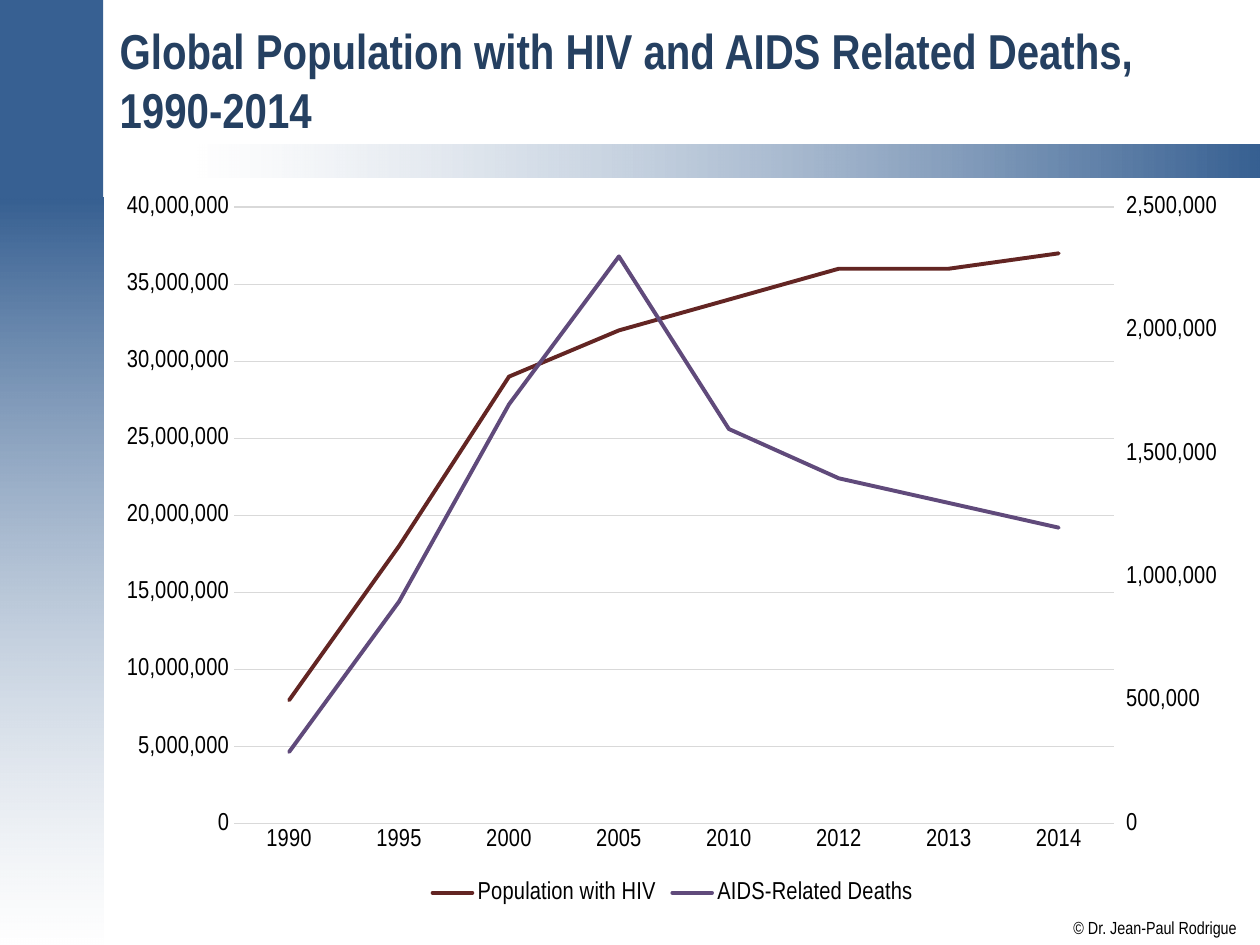
from copy import deepcopy

from lxml import etree
from pptx import Presentation
from pptx.chart.data import CategoryChartData
from pptx.dml.color import RGBColor
from pptx.enum.chart import XL_CHART_TYPE, XL_LEGEND_POSITION, XL_TICK_MARK
from pptx.enum.shapes import MSO_SHAPE
from pptx.enum.text import MSO_ANCHOR, MSO_AUTO_SIZE, PP_ALIGN
from pptx.oxml import parse_xml
from pptx.oxml.ns import nsdecls, qn
from pptx.util import Inches, Pt

LINE = XL_CHART_TYPE.LINE
BOTTOM = XL_LEGEND_POSITION.BOTTOM
NO_TICK = XL_TICK_MARK.NONE
RECT = MSO_SHAPE.RECTANGLE
MIDDLE = MSO_ANCHOR.MIDDLE
NO_FIT = MSO_AUTO_SIZE.NONE
FIT_SHAPE = MSO_AUTO_SIZE.SHAPE_TO_FIT_TEXT
LEFT = PP_ALIGN.LEFT

FONT = "Arial Narrow"
BLUE, NAVY, WHITE, BLACK, GREY = "376092", "254061", "FFFFFF", "000000", "D9D9D9"

YEARS = ["1990", "1995", "2000", "2005", "2010", "2012", "2013", "2014"]
SERIES = [
    ("Population with HIV", "632523",
     [8000000, 18000000, 29000000, 32000000, 34000000, 36000000, 36000000, 37000000]),
    ("AIDS-Related Deaths", "604A7B",
     [290000, 900000, 1700000, 2300000, 1600000, 1400000, 1300000, 1200000]),
]


def rgb(value):
    return RGBColor.from_string(value)


def box_inches(box):
    return [Inches(v) for v in box]


def style_font(font, size, color, bold=False):
    font.name = FONT
    font.size = Pt(size)
    font.bold = bold
    font.color.rgb = rgb(color)


def add_band(slide, box, colors, angle=0, white_alpha=100):
    """Add a plain band for one colour, or a gradient band for two."""
    s = slide.shapes.add_shape(RECT, *box_inches(box))
    s.shadow.inherit = False
    s.line.fill.background()
    if len(colors) == 1:
        s.fill.solid()
        s.fill.fore_color.rgb = rgb(colors[0])
        return
    s.fill.gradient()
    s.fill.gradient_angle = angle
    for stop, color, position in zip(s.fill.gradient_stops, colors, (0, 1)):
        stop.color.rgb = rgb(color)
        stop.position = position
    for clr in s._element.spPr.iter(qn("a:srgbClr")):
        if clr.get("val") == WHITE:
            etree.SubElement(clr, qn("a:alpha"), val=str(white_alpha * 1000))


def add_backdrop(slide):
    add_band(slide, (-0.01, 1.57, 0.83, 5.93), [BLUE, WHITE], 270, 51)
    add_band(slide, (1.57, 1.15, 8.43, 0.26), [WHITE, BLUE], 0, 50)
    add_band(slide, (-0.01, -0.01, 0.83, 1.58), [BLUE])


def add_credit(slide, box):
    tf = slide.shapes.add_textbox(*box_inches(box)).text_frame
    tf.margin_left = tf.margin_right = tf.margin_top = tf.margin_bottom = 0
    tf.word_wrap = False
    tf.auto_size = FIT_SHAPE
    r = tf.paragraphs[0].add_run()
    r.text = "© Dr. Jean-Paul Rodrigue"
    style_font(r.font, 10, BLACK)


def set_title(slide, box):
    title = slide.shapes.title
    title.left, title.top, title.width, title.height = box_inches(box)
    tf = title.text_frame
    tf.word_wrap = True
    tf.auto_size = NO_FIT
    tf.vertical_anchor = MIDDLE
    p = tf.paragraphs[0]
    p.alignment = LEFT
    r = p.add_run()
    r.text = "Global Population with HIV and AIDS Related Deaths, 1990-2014"
    style_font(r.font, 28, NAVY, bold=True)


def set_plot_layout(plot_area, x, y, w, h):
    """Fix the inner plot area, in fractions of the chart."""
    for old in plot_area.findall(qn("c:layout")):
        plot_area.remove(old)
    plot_area.insert(0, parse_xml(
        f'<c:layout {nsdecls("c")}><c:manualLayout><c:layoutTarget val="inner"/>'
        '<c:xMode val="edge"/><c:yMode val="edge"/>'
        f'<c:x val="{x}"/><c:y val="{y}"/><c:w val="{w}"/><c:h val="{h}"/>'
        '</c:manualLayout></c:layout>'))


def move_last_series_right(plot_area):
    """Give the last series its own line plot and a value axis on the right."""
    left_plot = plot_area.find(qn("c:lineChart"))
    right_plot = deepcopy(left_plot)
    left_plot.remove(left_plot.findall(qn("c:ser"))[-1])
    for ser in right_plot.findall(qn("c:ser"))[:-1]:
        right_plot.remove(ser)
    left_plot.addnext(right_plot)

    cat_id, val_id = "50010", "50020"
    for ax_id, new_id in zip(right_plot.findall(qn("c:axId")), (cat_id, val_id)):
        ax_id.set("val", new_id)

    val_ax = deepcopy(plot_area.find(qn("c:valAx")))
    cat_ax = deepcopy(plot_area.find(qn("c:catAx")))
    val_ax.remove(val_ax.find(qn("c:majorGridlines")))
    for axis, own, other, settings in (
            (val_ax, val_id, cat_id,
             {"axPos": "r", "crosses": "max", "majorTickMark": "out"}),
            (cat_ax, cat_id, val_id, {"delete": "1"})):
        settings = {"axId": own, "crossAx": other, **settings}
        for tag, value in settings.items():
            axis.find(qn("c:" + tag)).set("val", value)
    val_ax.find(qn("c:scaling")).find(qn("c:max")).set("val", "2500000")
    val_ax.find(qn("c:majorUnit")).set("val", "500000")
    plot_area.findall(qn("c:valAx"))[-1].addnext(val_ax)
    val_ax.addnext(cat_ax)


def add_line_chart(slide, box):
    data = CategoryChartData(number_format="#,##0")
    data.categories = YEARS
    for name, _, values in SERIES:
        data.add_series(name, values)
    chart = slide.shapes.add_chart(LINE, *box_inches(box), data).chart
    chart.has_title = False
    style_font(chart.font, 14, BLACK)
    chart.has_legend = True
    chart.legend.position = BOTTOM
    chart.legend.include_in_layout = False
    style_font(chart.legend.font, 14, BLACK)

    plot = chart.plots[0]
    plot.vary_by_categories = False
    for series, (_, color, _) in zip(plot.series, SERIES):
        series.smooth = False
        series.format.line.color.rgb = rgb(color)
        series.format.line.width = Pt(2.25)
        series._element.spPr.find(qn("a:ln")).set("cap", "rnd")

    cat_axis, val_axis = chart.category_axis, chart.value_axis
    for axis in (cat_axis, val_axis):
        axis.major_tick_mark = axis.minor_tick_mark = NO_TICK
        style_font(axis.tick_labels.font, 14, BLACK)
    val_axis.minimum_scale, val_axis.maximum_scale = 0, 40000000
    val_axis.major_unit = 5000000
    val_axis.tick_labels.number_format = "#,##0"
    val_axis.tick_labels.number_format_is_linked = False
    val_axis.format.line.fill.background()
    for line in (cat_axis.format.line, val_axis.major_gridlines.format.line):
        line.color.rgb = rgb(GREY)
        line.width = Pt(0.75)

    plot_area = chart._chartSpace.chart.plotArea
    move_last_series_right(plot_area)
    set_plot_layout(plot_area, 0.114, 0.037, 0.774, 0.845)


def main():
    prs = Presentation()
    prs.slide_width, prs.slide_height = Inches(10), Inches(7.5)
    slide = prs.slides.add_slide(prs.slide_layouts[5])
    add_backdrop(slide)
    add_credit(slide, (8.52, 7.28, 1.3, 0.17))
    set_title(slide, (0.85, 0.11, 8.98, 1.04))
    add_line_chart(slide, (0.83, 1.43, 9.02, 5.79))
    prs.save("out.pptx")


if __name__ == "__main__":
    main()
